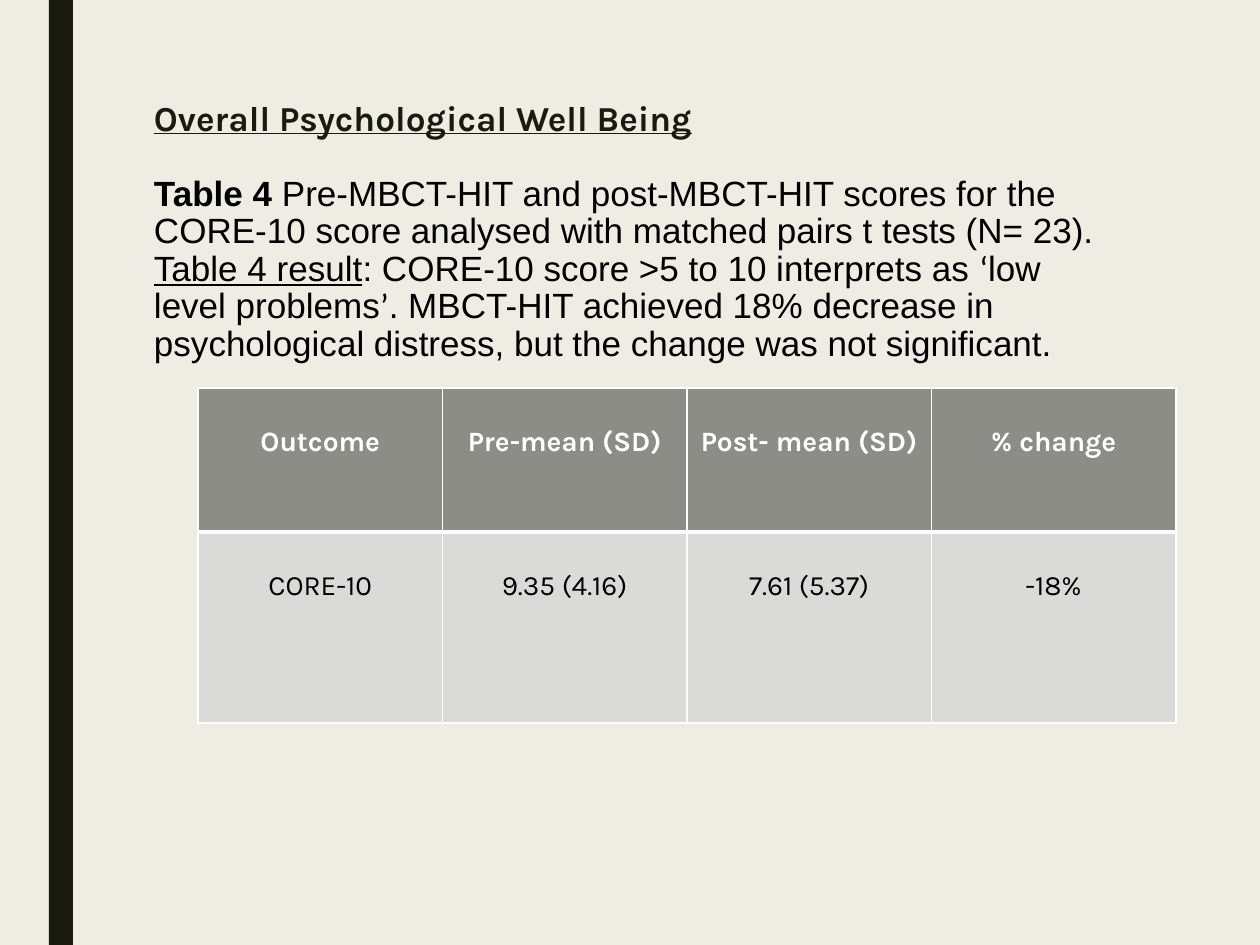
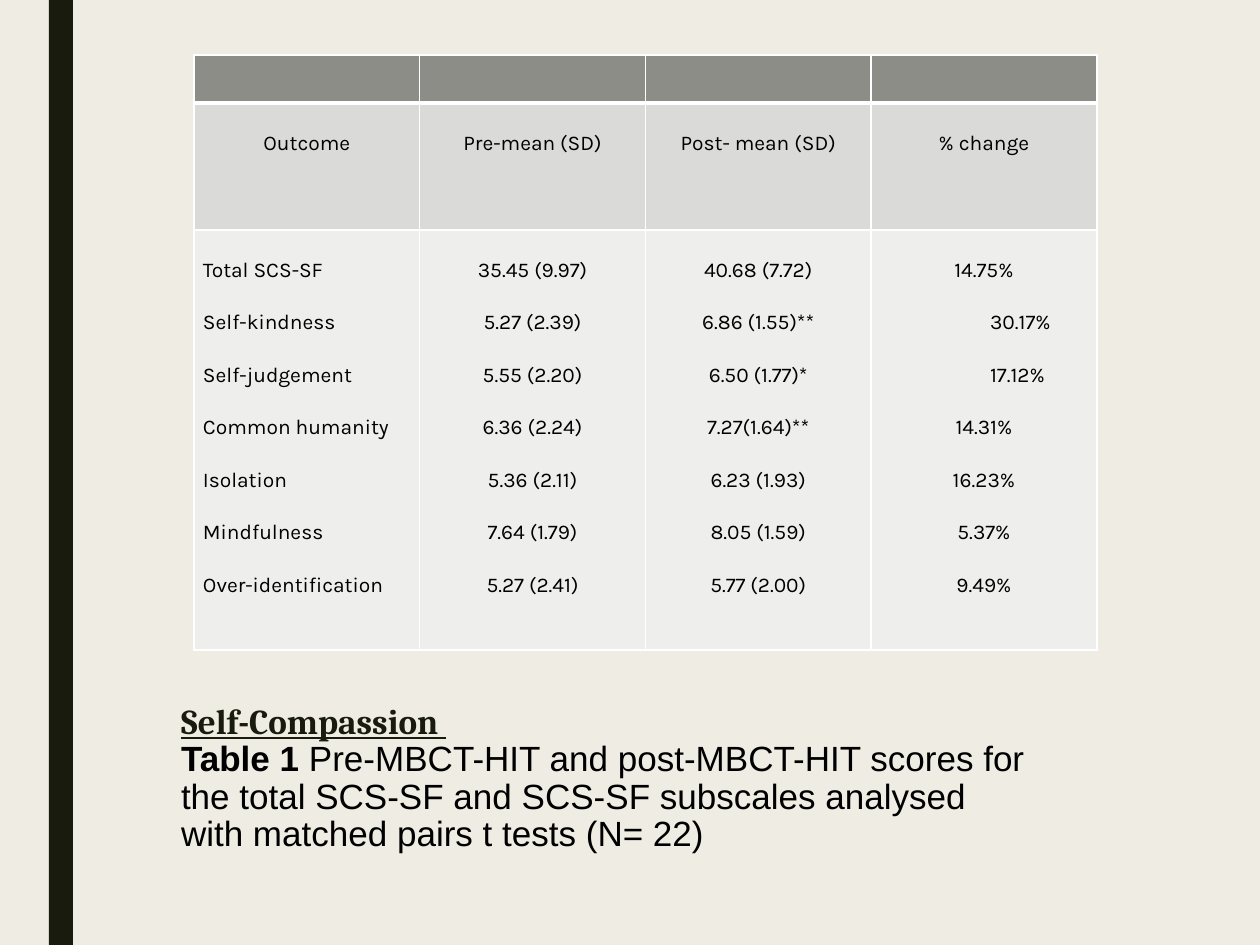
from dataclasses import dataclass

from lxml.etree import SubElement
from pptx import Presentation
from pptx.dml.color import RGBColor
from pptx.enum.shapes import MSO_SHAPE
from pptx.enum.text import MSO_ANCHOR, MSO_AUTO_SIZE, PP_ALIGN
from pptx.oxml.ns import qn
from pptx.util import Emu, Pt

EMU_PER_PX = 914400 / 126
SLIDE_W, SLIDE_H = 1260, 945
TITLE_ONLY = 5


@dataclass(frozen=True)
class Theme:
    paper: str = "EFEDE3"
    ink: str = "191B0E"
    black: str = "000000"
    white: str = "FFFFFF"
    header: str = "8C8D86"
    row_dark: str = "DADBD9"
    row_light: str = "EEEEED"
    heading_font: str = "Karla"
    serif_font: str = "Cambria"
    text_font: str = "Arial"
    quote_font: str = "Calibri"
    title_size: int = 20
    title_leading: float = 21.4
    large_cell: int = 16
    small_cell: int = 12
    thin: int = 1
    thick: int = 3


T = Theme()
HEADING = dict(name=T.heading_font, size=T.title_size, color=T.ink,
               bold=True, underline=True)
SERIF_HEADING = {**HEADING, "name": T.serif_font}
TEXT = dict(name=T.text_font, size=T.title_size, color=T.black,
            bold=False, underline=False)
STRONG = {**TEXT, "bold": True}
UNDERLINED = {**TEXT, "underline": True}
QUOTE = {**TEXT, "name": T.quote_font}
LARGE_HEAD = dict(name=T.heading_font, size=T.large_cell, color=T.white, bold=True)
LARGE_CELL = {**LARGE_HEAD, "color": T.black, "bold": False}
SMALL_CELL = {**LARGE_CELL, "size": T.small_cell}


def px(n):
    return Emu(round(n * EMU_PER_PX))


def rgb(value):
    return RGBColor.from_string(value)


def set_attrs(obj, values):
    for key, value in values.items():
        setattr(obj, key, value)


def add_run(p, text, fmt):
    r = p.add_run()
    r.text = text
    values = {**fmt, "size": Pt(fmt["size"])}
    r.font.color.rgb = rgb(values.pop("color"))
    set_attrs(r.font, values)


def add_band(s):
    sp = s.shapes.add_shape(MSO_SHAPE.RECTANGLE, px(49), 0, px(24), px(SLIDE_H))
    sp.shadow.inherit = False
    sp.fill.solid()
    sp.fill.fore_color.rgb = rgb(T.ink)
    sp.line.fill.background()


def new_slide(prs):
    s = prs.slides.add_slide(prs.slide_layouts[TITLE_ONLY])
    add_band(s)
    return s


def place_title(s, box, paragraphs, inset_left=13, inset_top=6, heading_gap=0):
    sp = s.shapes.title
    set_attrs(sp, dict(zip(("left", "top", "width", "height"), map(px, box))))
    tf = sp.text_frame
    set_attrs(tf, dict(word_wrap=True, auto_size=MSO_AUTO_SIZE.NONE,
                       vertical_anchor=MSO_ANCHOR.TOP,
                       margin_left=px(inset_left), margin_right=px(13),
                       margin_top=px(inset_top), margin_bottom=px(6)))
    for i, runs in enumerate(paragraphs):
        p = tf.add_paragraph() if i else tf.paragraphs[0]
        set_attrs(p, dict(alignment=PP_ALIGN.LEFT, line_spacing=Pt(T.title_leading),
                          space_before=Pt(0),
                          space_after=Pt(0 if i else heading_gap)))
        for text, fmt in runs:
            add_run(p, text, fmt)


def set_borders(cell, row):
    widths = dict(L=T.thin, R=T.thin,
                  T=T.thick if row == 1 else T.thin,
                  B=T.thick if row == 0 else T.thin)
    tcPr = cell._tc.get_or_add_tcPr()
    for side, width in widths.items():
        ln = SubElement(tcPr, qn(f"a:ln{side}"), w=str(Pt(width)))
        fill = SubElement(ln, qn("a:solidFill"))
        SubElement(fill, qn("a:srgbClr"), val=T.white)


def fill_cell(cell, row, lines, fmt, color, top, align, gap, indents):
    set_borders(cell, row)
    cell.fill.solid()
    cell.fill.fore_color.rgb = rgb(color)
    set_attrs(cell, dict(margin_left=px(9), margin_right=px(9),
                         margin_top=px(top if lines else 0), margin_bottom=0))
    for i, text in enumerate(lines):
        tf = cell.text_frame
        p = tf.add_paragraph() if i else tf.paragraphs[0]
        p.alignment = align
        p.space_before = Pt(gap if i else 0)
        add_run(p, text, fmt)
        if text in indents:
            p.alignment = PP_ALIGN.LEFT
            p._p.get_or_add_pPr().set("marL", str(px(indents[text])))


def add_scores(s, box, heights, rows, formats, colors, top,
               first_align=PP_ALIGN.CENTER, gap=0, indents={}):
    x, y, w = box
    n = len(rows[0])
    table = s.shapes.add_table(len(rows), n, px(x), px(y), px(w),
                               px(sum(heights))).table
    for column in table.columns:
        column.width = px(w / n)
    for i, (height, cells) in enumerate(zip(heights, rows)):
        table.rows[i].height = px(height)
        for j, lines in enumerate(cells):
            left = j == 0 and i == len(rows) - 1
            align = first_align if left else PP_ALIGN.CENTER
            fill_cell(table.cell(i, j), i, lines, formats[i], colors[i],
                      top, align, gap, indents)


LABELS = [["Outcome"], ["Pre-mean (SD)"], ["Post- mean (SD)"], ["% change"]]


def well_being_slide(prs):
    s = new_slide(prs)
    place_title(s, (141, 95, 993, 204), [
        [("Overall Psychological Well Being", HEADING)],
        [("Table 4", STRONG),
         (" Pre-MBCT-HIT and post-MBCT-HIT scores for the CORE-10 score "
          "analysed with matched pairs t tests (N= 23).", TEXT)],
        [("Table 4 result", UNDERLINED),
         (": CORE-10 score >5 to 10 interprets as ", TEXT),
         ("‘", QUOTE), ("low level problems", TEXT), ("’", QUOTE),
         (". MBCT-HIT achieved 18% decrease in psychological distress, "
          "but the change was not significant.", TEXT)],
    ], heading_gap=T.title_leading)
    scores = [["CORE-10"], ["9.35 (4.16)"], ["7.61 (5.37)"], ["-18%"]]
    add_scores(s, (198, 388, 978), (144, 191), [LABELS, scores],
               (LARGE_HEAD, LARGE_CELL), (T.header, T.row_dark), top=38)


def self_compassion_slide(prs):
    s = new_slide(prs)
    place_title(s, (105, 660, 935, 190), [
        [("Self-Compassion ", SERIF_HEADING)],
        [("Table 1", STRONG),
         (" Pre-MBCT-HIT and post-MBCT-HIT scores for the total SCS-SF and "
          "SCS-SF subscales analysed with matched pairs t tests (N= 22)", TEXT)],
    ], inset_left=76, inset_top=44)
    scores = [
        ("Total SCS-SF", "35.45 (9.97)", "40.68 (7.72)", "14.75%"),
        ("Self-kindness", "5.27 (2.39)", "6.86 (1.55)**", "30.17%"),
        ("Self-judgement", "5.55 (2.20)", "6.50 (1.77)*", "17.12%"),
        ("Common humanity", "6.36 (2.24)", "7.27(1.64)**", "14.31%"),
        ("Isolation", "5.36 (2.11)", "6.23 (1.93)", "16.23%"),
        ("Mindfulness", "7.64 (1.79)", "8.05 (1.59)", "5.37%"),
        ("Over-identification", "5.27 (2.41)", "5.77 (2.00)", "9.49%"),
    ]
    add_scores(s, (194, 55, 903), (48, 127, 420),
               [[[]] * len(LABELS), LABELS, list(zip(*scores))],
               (SMALL_CELL,) * 3, (T.header, T.row_dark, T.row_light), top=28,
               first_align=PP_ALIGN.LEFT, gap=16,
               indents={"30.17%": 110, "17.12%": 110})


def main():
    prs = Presentation()
    prs.slide_width, prs.slide_height = px(SLIDE_W), px(SLIDE_H)
    background = prs.slide_master.background.fill
    background.solid()
    background.fore_color.rgb = rgb(T.paper)
    well_being_slide(prs)
    self_compassion_slide(prs)
    prs.save("out.pptx")


if __name__ == "__main__":
    main()
